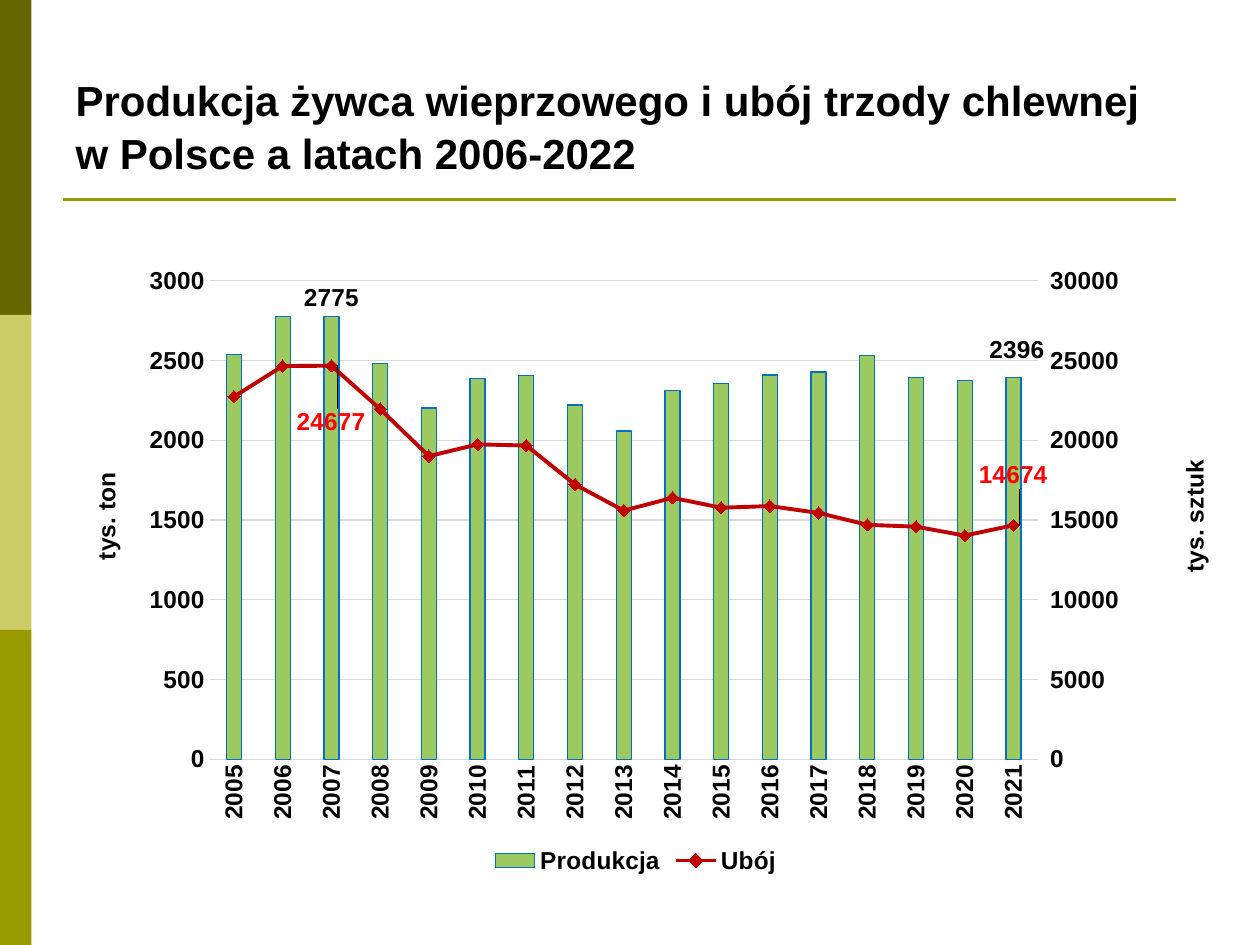
from copy import deepcopy

from pptx import Presentation
from pptx.chart.axis import ValueAxis
from pptx.chart.data import CategoryChartData
from pptx.dml.color import RGBColor
from pptx.enum.chart import (XL_CHART_TYPE, XL_LABEL_POSITION, XL_LEGEND_POSITION,
                             XL_MARKER_STYLE, XL_TICK_MARK)
from pptx.enum.shapes import MSO_CONNECTOR, MSO_SHAPE
from pptx.enum.text import MSO_ANCHOR, MSO_AUTO_SIZE, PP_ALIGN
from pptx.oxml import parse_xml
from pptx.oxml.ns import nsdecls, qn
from pptx.util import Pt

COLUMNS = XL_CHART_TYPE.COLUMN_CLUSTERED
OUTSIDE, RIGHT = XL_LABEL_POSITION.OUTSIDE_END, XL_LABEL_POSITION.RIGHT
NO_TICK, TICK_OUT = XL_TICK_MARK.NONE, XL_TICK_MARK.OUTSIDE

HEX = {"dark": "666600", "pale": "CCCC66", "olive": "999900", "text": "000000",
       "grid": "D9D9D9", "bar": "9CC960", "bar_edge": "0070C0",
       "line": "C00000", "line_label": "FF0000"}
COLORS = {name: RGBColor.from_string(value) for name, value in HEX.items()}

PRODUCTION = [2540, 2774, 2775, 2483, 2202, 2388, 2405, 2222, 2059,
              2311, 2354, 2410, 2428, 2530, 2392, 2376, 2396]
SLAUGHTER = [22736, 24654, 24677, 21963, 19008, 19745, 19674, 17228, 15593,
             16396, 15773, 15875, 15447, 14699, 14584, 14024, 14674]


def format_font(font, size, color="text"):
    values = {"name": "Arial", "size": Pt(size), "bold": True}
    for name, value in values.items():
        setattr(font, name, value)
    font.color.rgb = COLORS[color]


def place(parent, index, **values):
    """Give a chart element a manual layout, in fractions of the chart."""
    for old in parent.findall(qn("c:layout")):
        parent.remove(old)
    parts = "".join(f'<c:{name} val="{value}"/>' for name, value in values.items())
    parent.insert(index, parse_xml(
        f'<c:layout {nsdecls("c")}><c:manualLayout>{parts}</c:manualLayout></c:layout>'))


deck = Presentation()
deck.slide_width, deck.slide_height = Pt(720), Pt(540)
page = deck.slides.add_slide(deck.slide_layouts[5])

# Side band and rule under the title
for row, color in enumerate(["dark", "pale", "olive"]):
    band = page.shapes.add_shape(MSO_SHAPE.RECTANGLE, 0, Pt(180 * row), Pt(18), Pt(180))
    band.shadow.inherit = False
    band.fill.solid()
    band.fill.fore_color.rgb = COLORS[color]
    band.line.fill.background()

rule = page.shapes.add_connector(MSO_CONNECTOR.STRAIGHT, Pt(36), Pt(114), Pt(672), Pt(114))
rule.line.color.rgb = COLORS["olive"]
rule.line.width = Pt(1.5)
rule.element.spPr.append(parse_xml(f'<a:effectLst {nsdecls("a")}/>'))

# Title
title = page.shapes.title
title.left, title.top, title.width, title.height = Pt(36), Pt(21.6), Pt(624.5), Pt(83.5)
frame = title.text_frame
frame.text = "Produkcja żywca wieprzowego i ubój trzody chlewnej w Polsce a latach 2006-2022"
frame.auto_size = MSO_AUTO_SIZE.NONE
frame.vertical_anchor = MSO_ANCHOR.BOTTOM
para = frame.paragraphs[0]
para.alignment = PP_ALIGN.LEFT
para.line_spacing = 1.05
format_font(para.runs[0].font, 24)

# Chart
data = CategoryChartData()
data.categories = [str(year) for year in range(2005, 2022)]
data.add_series("Produkcja", PRODUCTION)
data.add_series("Ubój", SLAUGHTER)
chart = page.shapes.add_chart(COLUMNS, Pt(36), Pt(145.5), Pt(659), Pt(357), data).chart
format_font(chart.font, 14)
chart.has_title = False
chart.has_legend = True
chart.legend.position = XL_LEGEND_POSITION.BOTTOM
chart.legend.include_in_layout = False
format_font(chart.legend.font, 14)

years, tons = chart.category_axis, chart.value_axis
for axis in (years, tons):
    axis.major_tick_mark = axis.minor_tick_mark = NO_TICK
    format_font(axis.tick_labels.font, 14)
tons.minimum_scale, tons.maximum_scale, tons.major_unit = 0, 3000, 500
tons.has_major_gridlines = True
for line in (years.format.line, tons.major_gridlines.format.line):
    line.color.rgb = COLORS["grid"]
    line.width = Pt(0.75)
tons.format.line.fill.background()

plot_area = chart.element.xpath("c:chart/c:plotArea")[0]
years_xml, tons_xml = plot_area.find(qn("c:catAx")), plot_area.find(qn("c:valAx"))
turned = years_xml.find(qn("c:txPr")).find(qn("a:bodyPr"))
turned.set("rot", "-5400000")
turned.set("vert", "horz")

# Second pair of axes, for the line
hidden_years_xml, pieces_xml = deepcopy(years_xml), deepcopy(tons_xml)
tons_xml.addnext(hidden_years_xml)
hidden_years_xml.addnext(pieces_xml)
for axis_xml, own, crossing in ((hidden_years_xml, "5001", "5002"),
                                (pieces_xml, "5002", "5001")):
    axis_xml.find(qn("c:axId")).set("val", own)
    axis_xml.find(qn("c:crossAx")).set("val", crossing)
hidden_years_xml.find(qn("c:delete")).set("val", "1")
pieces_xml.find(qn("c:axPos")).set("val", "r")
pieces_xml.find(qn("c:crosses")).set("val", "max")
pieces = ValueAxis(pieces_xml)
pieces.has_major_gridlines = False
pieces.maximum_scale, pieces.major_unit = 30000, 5000
pieces.major_tick_mark = TICK_OUT

for axis, axis_xml, text, x, y in ((tons, tons_xml, "tys. ton", 0.02, 0.34),
                                   (pieces, pieces_xml, "tys. sztuk", 0.97, 0.32)):
    axis.has_title = True
    frame = axis.axis_title.text_frame
    frame.text = text
    format_font(frame.paragraphs[0].runs[0].font, 14)
    heading = axis_xml.find(qn("c:title"))
    body = heading.find(qn("c:tx")).find(qn("c:rich")).find(qn("a:bodyPr"))
    body.set("rot", "-5400000")
    body.set("vert", "horz")
    place(heading, 1, xMode="edge", yMode="edge", x=x, y=y)
place(plot_area, 0, layoutTarget="inner", xMode="edge", yMode="edge",
      x=0.128, y=0.042, w=0.723, h=0.766)

# The second series becomes a line
line_chart = parse_xml(
    f'<c:lineChart {nsdecls("c")}><c:grouping val="standard"/><c:varyColors val="0"/>'
    '<c:marker val="1"/><c:axId val="5001"/><c:axId val="5002"/></c:lineChart>')
bar_chart = plot_area.find(qn("c:barChart"))
line_series = bar_chart.findall(qn("c:ser"))[1]
for flag in line_series.findall(qn("c:invertIfNegative")):
    line_series.remove(flag)
line_chart.insert(2, line_series)
bar_chart.addnext(line_chart)

bar_plot, line_plot = chart.plots
bar_plot.gap_width = 225
bar_plot.vary_by_categories = False
production, slaughter = bar_plot.series[0], line_plot.series[0]
production.format.fill.solid()
production.format.fill.fore_color.rgb = COLORS["bar"]
production.format.line.color.rgb = COLORS["bar_edge"]
production.format.line.width = Pt(0.75)
slaughter.smooth = False
slaughter.format.line.color.rgb = COLORS["line"]
slaughter.format.line.width = Pt(2.25)
marker = slaughter.marker
marker.style, marker.size = XL_MARKER_STYLE.DIAMOND, 7
marker.format.fill.solid()
marker.format.fill.fore_color.rgb = COLORS["line"]
marker.format.line.color.rgb = COLORS["line"]

# Labels of the peak and of the last year, with leader lines
LABELS = [(production, OUTSIDE, "text", {2: None, 16: (0.003, -0.013)}),
          (slaughter, RIGHT, "line_label", {2: (-0.04, 0.09), 16: (-0.04, -0.08)})]
for series, position, color, offsets in LABELS:
    series.data_labels.show_value = False
    for index in offsets:
        label = series.points[index].data_label
        format_font(label.font, 14, color)
        label.position = position
for labels, offsets in zip(plot_area.xpath(".//c:ser/c:dLbls"), [row[3] for row in LABELS]):
    for label, offset in zip(labels.findall(qn("c:dLbl")), offsets.values()):
        if offset:
            place(label, 1, x=offset[0], y=offset[1])
    labels.append(parse_xml(
        f'<c:extLst {nsdecls("c")}><c:ext uri="{{CE6537A1-D6FC-4f65-9D91-7224C49458BB}}" '
        'xmlns:c15="http://schemas.microsoft.com/office/drawing/2012/chart">'
        '<c15:showLeaderLines val="1"/></c:ext></c:extLst>'))

deck.save("out.pptx")
